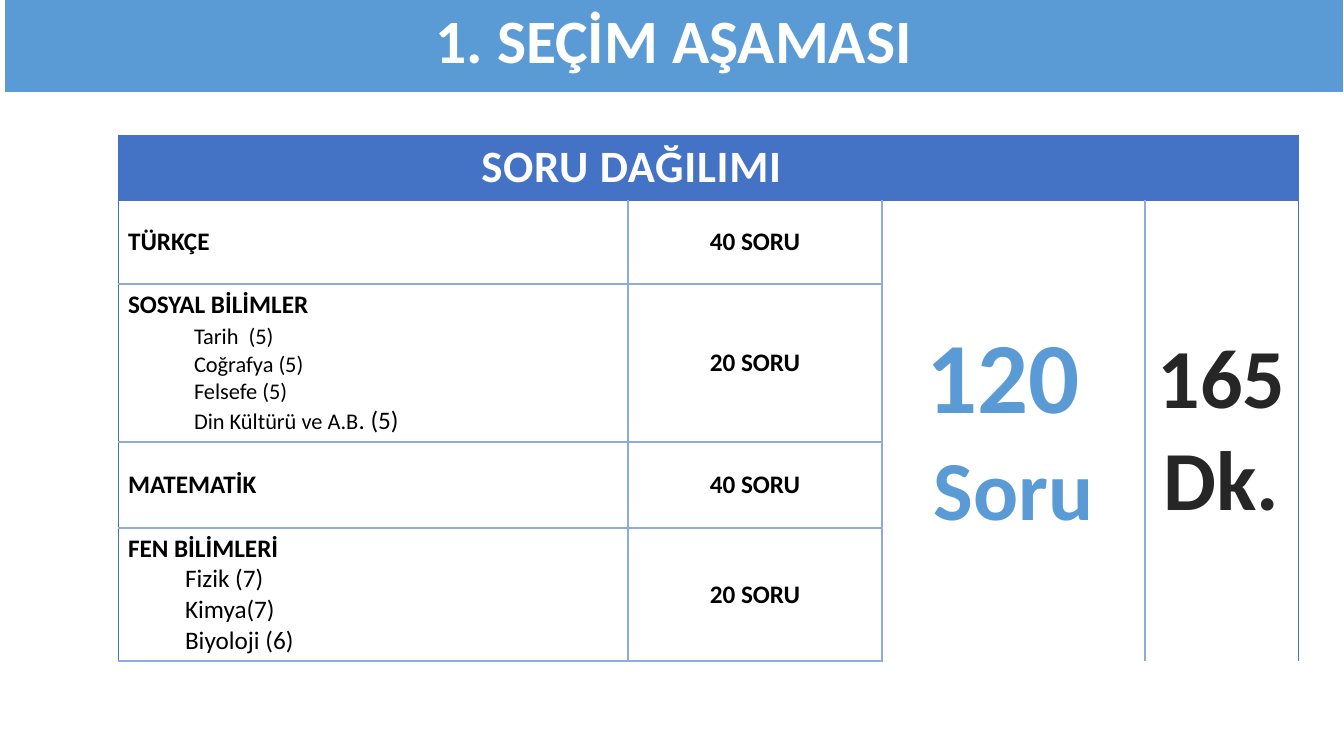
from pptx import Presentation
from pptx.dml.color import RGBColor
from pptx.enum.shapes import MSO_SHAPE
from pptx.enum.text import MSO_ANCHOR, PP_ALIGN
from pptx.oxml.ns import qn
from pptx.util import Pt
from lxml import etree

RECT = MSO_SHAPE.RECTANGLE
MIDDLE, TOP = MSO_ANCHOR.MIDDLE, MSO_ANCHOR.TOP
LEFT, CENTER = PP_ALIGN.LEFT, PP_ALIGN.CENTER

FONT = "Calibri"
SKY, BLUE, PALE = "5B9BD5", "4472C4", "8FAADC"
BLACK, WHITE, DARK = "000000", "FFFFFF", "262626"

# Content
TITLE = "1. SEÇİM AŞAMASI"
HEADER = "SORU DAĞILIMI"
# subject, topics (text runs with sizes), topic indent in px, questions
SUBJECTS = [
    ("TÜRKÇE", [], 0, "40 SORU"),
    ("SOSYAL BİLİMLER",
     [[("Tarih  (5)", 16)], [("Coğrafya (5)", 16)], [("Felsefe (5)", 16)],
      [("Din Kültürü ve A.B", 16), (". (5)", 18)]], 66, "20 SORU"),
    ("MATEMATİK", [], 0, "40 SORU"),
    ("FEN BİLİMLERİ",
     [[("Fizik (7)", 18)], [("Kimya(7)", 18)], [("Biyoloji (6)", 18)]],
     57, "20 SORU"),
]
TOTAL = [[("120", 72), (" ", 66)], [("Soru", 60)]]
DURATION = [[("165 Dk.", 60)]]

# Layout in px
SLIDE = (1344, 756)
BANNER = (4, -6, 1340, 99)
TABLE_AT = (118, 135)
COLS = [510, 254, 263, 153]
ROWS = [65, 84, 158, 86, 133]

THIN, INNER, RULE = (BLUE, 0.5), (PALE, 1), (PALE, 2.25)


def px(n):
    return round(n * 914400 / 100.8)


def rgb(value):
    return RGBColor.from_string(value)


def write(tf, paragraphs, color, align=LEFT, bold=True):
    """Fill a text frame with paragraphs made of (text, size) runs."""
    for i, runs in enumerate(paragraphs):
        p = tf.paragraphs[0] if i == 0 else tf.add_paragraph()
        p.alignment = align
        p.font.size = Pt(runs[0][1])
        for text, size in runs:
            r = p.add_run()
            r.text = text
            r.font.name, r.font.size, r.font.bold = FONT, Pt(size), bold
            r.font.color.rgb = rgb(color)


def set_borders(cell, sides):
    """Sides are left, right, top, bottom; None leaves a side open."""
    tc_pr = cell._tc.get_or_add_tcPr()
    for i, (tag, side) in enumerate(zip(("lnL", "lnR", "lnT", "lnB"), sides)):
        ln = etree.Element(qn("a:" + tag))
        if side:
            ln.set("w", str(Pt(side[1])))
            fill = etree.SubElement(ln, qn("a:solidFill"))
            etree.SubElement(fill, qn("a:srgbClr"), val=side[0])
        else:
            etree.SubElement(ln, qn("a:noFill"))
        tc_pr.insert(i, ln)


def borders_for(row, col):
    last_row, last_col = len(ROWS) - 1, len(COLS) - 1
    if row == 0:
        return (THIN if col == 0 else None, THIN if col == last_col else None,
                THIN, THIN)
    left = THIN if col == 0 else INNER
    right = THIN if col == last_col else INNER
    if col < 2:
        return left, right, THIN if row == 1 else RULE, RULE
    return (left, right, THIN if row == 1 else None,
            THIN if row == last_row else None)


prs = Presentation()
prs.slide_width, prs.slide_height = map(px, SLIDE)
s = prs.slides.add_slide(prs.slide_layouts[6])

# Title banner
sp = s.shapes.add_shape(RECT, *map(px, BANNER))
sp.shadow.inherit = False
sp.fill.solid()
sp.fill.fore_color.rgb = rgb(SKY)
sp.line.color.rgb = rgb(WHITE)
sp.line.width = Pt(1.5)
tf = sp.text_frame
tf.word_wrap = True
tf.vertical_anchor = MIDDLE
write(tf, [[(TITLE, 44)]], WHITE, CENTER)
tf.paragraphs[0].line_spacing = 0.9

# Table grid
table = s.shapes.add_table(len(ROWS), len(COLS), *map(px, TABLE_AT),
                           px(sum(COLS)), px(sum(ROWS))).table
table.first_row = table.horz_banding = False
for column, width in zip(table.columns, COLS):
    column.width = px(width)
for row, height in zip(table.rows, ROWS):
    row.height = px(height)
for r_no in range(len(ROWS)):
    for c_no in range(len(COLS)):
        cell = table.cell(r_no, c_no)
        cell.vertical_anchor = MIDDLE if r_no else TOP
        if r_no:
            cell.fill.background()
        else:
            cell.fill.solid()
            cell.fill.fore_color.rgb = rgb(BLUE)
        set_borders(cell, borders_for(r_no, c_no))

# Header row
head = table.cell(0, 0)
head.merge(table.cell(0, 2))
write(head.text_frame, [[(HEADER, 32)]], "FEFEFE", CENTER)
head.text_frame.paragraphs[0].runs[0].font._element.set("spc", "50")

# Subjects with their topics and question counts
for r_no, (subject, topics, indent, count) in enumerate(SUBJECTS, 1):
    tf = table.cell(r_no, 0).text_frame
    write(tf, [[(subject, 18)]] + topics, BLACK)
    for p in tf.paragraphs[1:]:
        p._p.get_or_add_pPr().set("marL", str(px(indent)))
        for r in p.runs:
            r.font.bold = False
    if topics and topics[0][0][1] == 16:
        tf.paragraphs[1].space_before = Pt(2)
    write(table.cell(r_no, 1).text_frame, [[(count, 18)]], BLACK, CENTER)

# Totals spanning all subjects
for c_no, paragraphs, color in ((2, TOTAL, SKY), (3, DURATION, DARK)):
    cell = table.cell(1, c_no)
    cell.merge(table.cell(len(SUBJECTS), c_no))
    write(cell.text_frame, paragraphs, color, CENTER)

prs.save("out.pptx")
